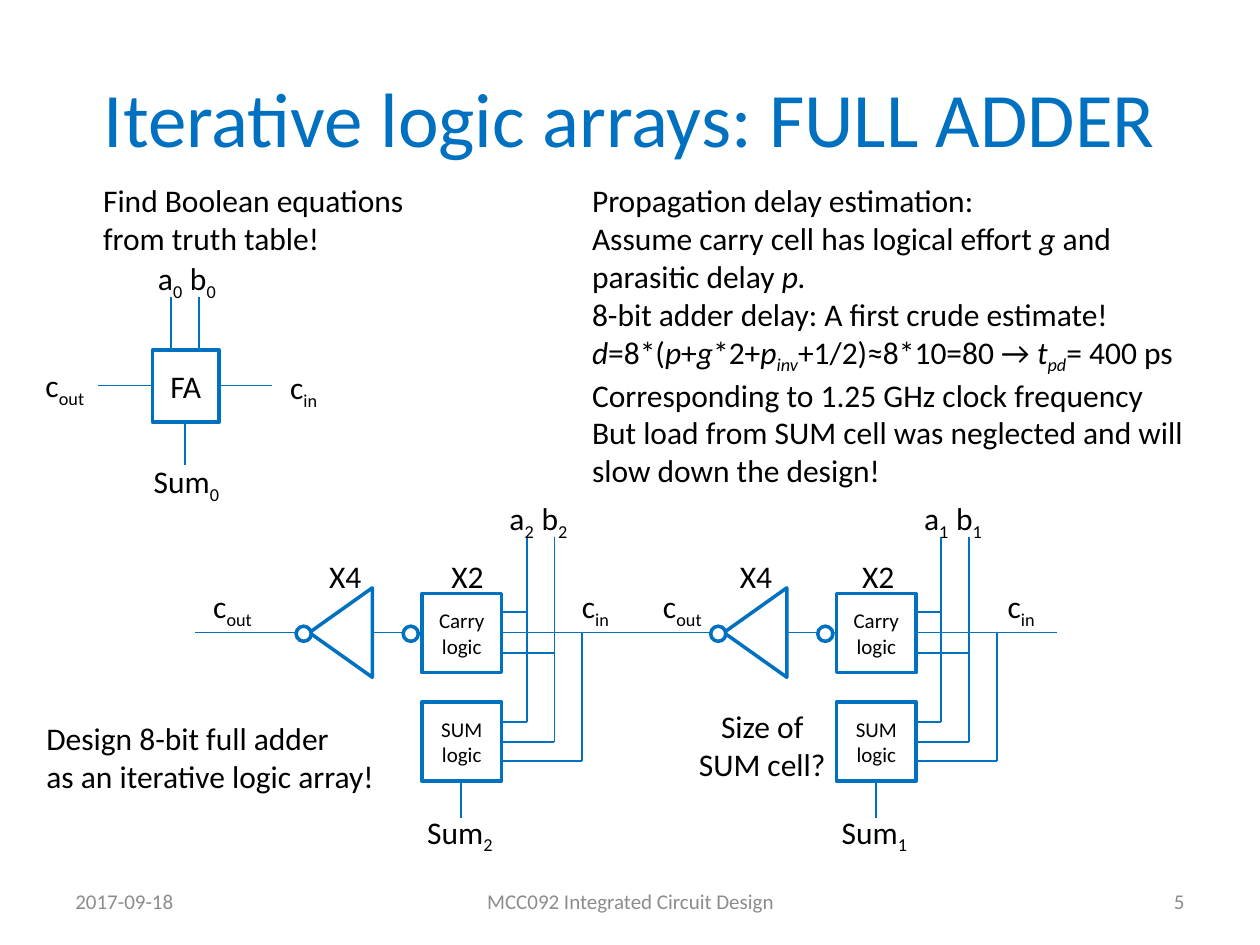
import pptx
import pptx.dml.color
import pptx.enum.shapes
import pptx.enum.text
import pptx.util
from lxml import etree

Inches = pptx.util.Inches
Align = pptx.enum.text.PP_ALIGN
Anchor = pptx.enum.text.MSO_ANCHOR
Preset = pptx.enum.shapes.MSO_SHAPE
LEFT, CENTER, RIGHT = Align.LEFT, Align.CENTER, Align.RIGHT

THEME = {
    "font": "Calibri",
    "blue": "0070C0", "black": "000000", "white": "FFFFFF", "grey": "8C8C8C",
    "title": 44, "body": 18, "small": 12,
    "wire": 1, "outline": 2,
}

TITLE = ["Iterative logic arrays: FULL ADDER"]
FOOTERS = [
    ("2017-09-18", (0.5, 6.95, 2.33, 0.4), LEFT),
    ("MCC092 Integrated Circuit Design", (3.42, 6.95, 3.17, 0.4), CENTER),
    ("5", (7.17, 6.95, 2.33, 0.4), RIGHT),
]
TASK = ["Find Boolean equations from truth table!"]
DESIGN = ["Design 8-bit full adder", "as an iterative logic array!"]
SIZE_QUESTION = ["Size of", "SUM cell?"]
DELAY = [
    "Propagation delay estimation:",
    [("Assume carry cell has logical effort ", ""), ("g", "i"),
     (" and parasitic delay ", ""), ("p.", "i")],
    "8-bit adder delay: A first crude estimate!",
    [("d", "i"), ("=8*(", ""), ("p", "i"), ("+", ""), ("g", "i"), ("*2+", ""),
     ("p", "i"), ("inv", "is"), ("+1/2)≈8*10=80 → ", ""),
     ("t", "i"), ("pd", "is"), ("= 400 ps", "")],
    "Corresponding to 1.25 GHz clock frequency",
    "But load from SUM cell was neglected and will slow down the design!",
]

ADDER_WIRES = [
    (1.47, 3.17, 1.47, 3.69), (1.58, 2.36, 1.58, 2.87),
    (1.36, 2.36, 1.36, 2.87), (0.78, 3.06, 2.16, 3.06),
]
ADDER_LABELS = [
    ("a", "0", 1.14, 2.01, 0.42), ("b", "0", 1.4, 2.01, 0.42),
    ("c", "in", 2.13, 2.87, 0.56), ("c", "out", 0.2, 2.86, 0.63),
    ("Sum", "0", 1.05, 3.62, 0.86),
]

CELLS = [
    {"bit": "1", "shift": 3.29, "cout": 5.12, "sizes": 3.26},
    {"bit": "2", "shift": 0, "cout": 1.55, "sizes": 0},
]
CELL_WIRES = [
    (3.66, 5.62, 3.66, 6.49), (4.4, 4.26, 4.4, 5.89), (4.18, 4.26, 4.18, 5.73),
    (4.62, 5.02, 4.62, 6.04), (1.55, 5.02, 5.1, 5.02), (3.75, 5.18, 4.4, 5.18),
    (3.57, 4.86, 4.18, 4.86), (3.62, 5.89, 4.4, 5.89), (3.66, 6.04, 4.62, 6.04),
    (3.62, 5.73, 4.18, 5.73),
]
CELL_BLOCKS = [("Carry logic", 4.71), ("SUM logic", 5.57)]
CELL_BUBBLES = [3.2, 2.35]
CELL_SIZES = [("X2", 3.28), ("X4", 2.31)]


def color(name):
    """Return a theme colour."""
    return pptx.dml.color.RGBColor.from_string(THEME[name])


def write(shape, paragraphs, size="body", ink="black", align=LEFT,
          anchor=Anchor.TOP, wrap=True):
    """Fill a shape with paragraphs of plain text or styled runs."""
    frame = shape.text_frame
    frame.word_wrap = wrap
    frame.vertical_anchor = anchor
    for index, content in enumerate(paragraphs):
        paragraph = frame.add_paragraph() if index else frame.paragraphs[0]
        paragraph.alignment = align
        paragraph.font.name = THEME["font"]
        paragraph.font.size = pptx.util.Pt(THEME[size])
        paragraph.font.color.rgb = color(ink)
        runs = [(content, "")] if isinstance(content, str) else content
        for text, style in runs:
            run = paragraph.add_run()
            run.text = text
            if "i" in style:
                run.font.italic = True
            if "s" in style:
                run._r.get_or_add_rPr().set("baseline", "-25000")


def add_text(slide, box, paragraphs, **options):
    """Add a text box."""
    shape = slide.shapes.add_textbox(*map(Inches, box))
    write(shape, paragraphs, **options)


def add_label(slide, name, subscript, left, top, width):
    """Add a centred signal name with its subscript."""
    add_text(slide, (left, top, width, 0.4), [[(name, ""), (subscript, "s")]], align=CENTER)


def add_wire(slide, wire, shift=0):
    """Add a straight wire, moved right by shift."""
    x1, y1, x2, y2 = wire
    connector = slide.shapes.add_connector(
        pptx.enum.shapes.MSO_CONNECTOR.STRAIGHT,
        *map(Inches, (x1 + shift, y1, x2 + shift, y2)))
    connector.line.color.rgb = color("blue")
    connector.line.width = pptx.util.Pt(THEME["wire"])
    etree.SubElement(connector._element.spPr, pptx.oxml.ns.qn("a:effectLst"))


def add_gate(slide, preset, box, outlined=True):
    """Add a white shape, with a blue outline if asked."""
    shape = slide.shapes.add_shape(preset, *map(Inches, box))
    shape.shadow.inherit = False
    shape.fill.solid()
    shape.fill.fore_color.rgb = color("white")
    if outlined:
        shape.line.color.rgb = color("blue")
        shape.line.width = pptx.util.Pt(THEME["outline"])
    else:
        shape.line.fill.background()
    return shape


def add_block(slide, text, box, size):
    """Add a logic block with a centred name."""
    write(add_gate(slide, Preset.RECTANGLE, box), [text], size=size,
          align=CENTER, anchor=Anchor.MIDDLE)


def add_panel(slide, box, paragraphs):
    """Add a white panel of body text."""
    write(add_gate(slide, Preset.RECTANGLE, box, outlined=False), paragraphs)


def add_full_adder(slide):
    """Draw the full adder symbol."""
    for wire in ADDER_WIRES:
        add_wire(slide, wire)
    add_block(slide, "FA", (1.21, 2.78, 0.53, 0.57), "body")
    for label in ADDER_LABELS:
        add_label(slide, *label)


def add_cell(slide, bit, shift, cout, sizes):
    """Draw one bit of the logic array."""
    for wire in CELL_WIRES:
        add_wire(slide, wire, shift)
    for text, top in CELL_BLOCKS:
        add_block(slide, text, (3.35 + shift, top, 0.63, 0.63), "small")
    inverter = add_gate(slide, Preset.ISOSCELES_TRIANGLE, (2.35 + shift, 4.77, 0.71, 0.5))
    inverter.rotation = 270
    for left in CELL_BUBBLES:
        add_gate(slide, Preset.OVAL, (left + shift, 4.97, 0.12, 0.12))
    add_label(slide, "a", bit, 3.93 + shift, 3.91, 0.42)
    add_label(slide, "b", bit, 4.19 + shift, 3.91, 0.42)
    add_label(slide, "Sum", bit, 3.21 + shift, 6.4, 0.88)
    add_label(slide, "c", "in", (4.45 if bit == "2" else 4.54) + shift, 4.61, 0.55)
    add_label(slide, "c", "out", cout, 4.61, 0.59)
    for text, left in CELL_SIZES:
        add_text(slide, (left + sizes, 4.37, 0.86, 0.4), [text], align=CENTER)


def main():
    """Build and save the slide."""
    presentation = pptx.Presentation()
    presentation.slide_width, presentation.slide_height = Inches(10), Inches(7.5)
    slide = presentation.slides.add_slide(presentation.slide_layouts[6])
    add_text(slide, (0.5, 0.3, 9, 1.25), TITLE, size="title", ink="blue",
             align=CENTER, anchor=Anchor.MIDDLE)
    for text, box, align in FOOTERS:
        add_text(slide, box, [text], size="small", ink="grey", align=align,
                 anchor=Anchor.MIDDLE)
    add_full_adder(slide)
    add_panel(slide, (0.72, 1.39, 2.64, 0.71), TASK)
    for cell in CELLS:
        add_cell(slide, **cell)
    add_text(slide, (5.37, 5.56, 1.36, 0.71), SIZE_QUESTION, align=CENTER)
    add_text(slide, (0.27, 5.66, 2.83, 0.71), DESIGN, wrap=False)
    add_panel(slide, (4.6, 1.39, 5.12, 2.52), DELAY)
    presentation.save("out.pptx")


if __name__ == "__main__":
    main()
